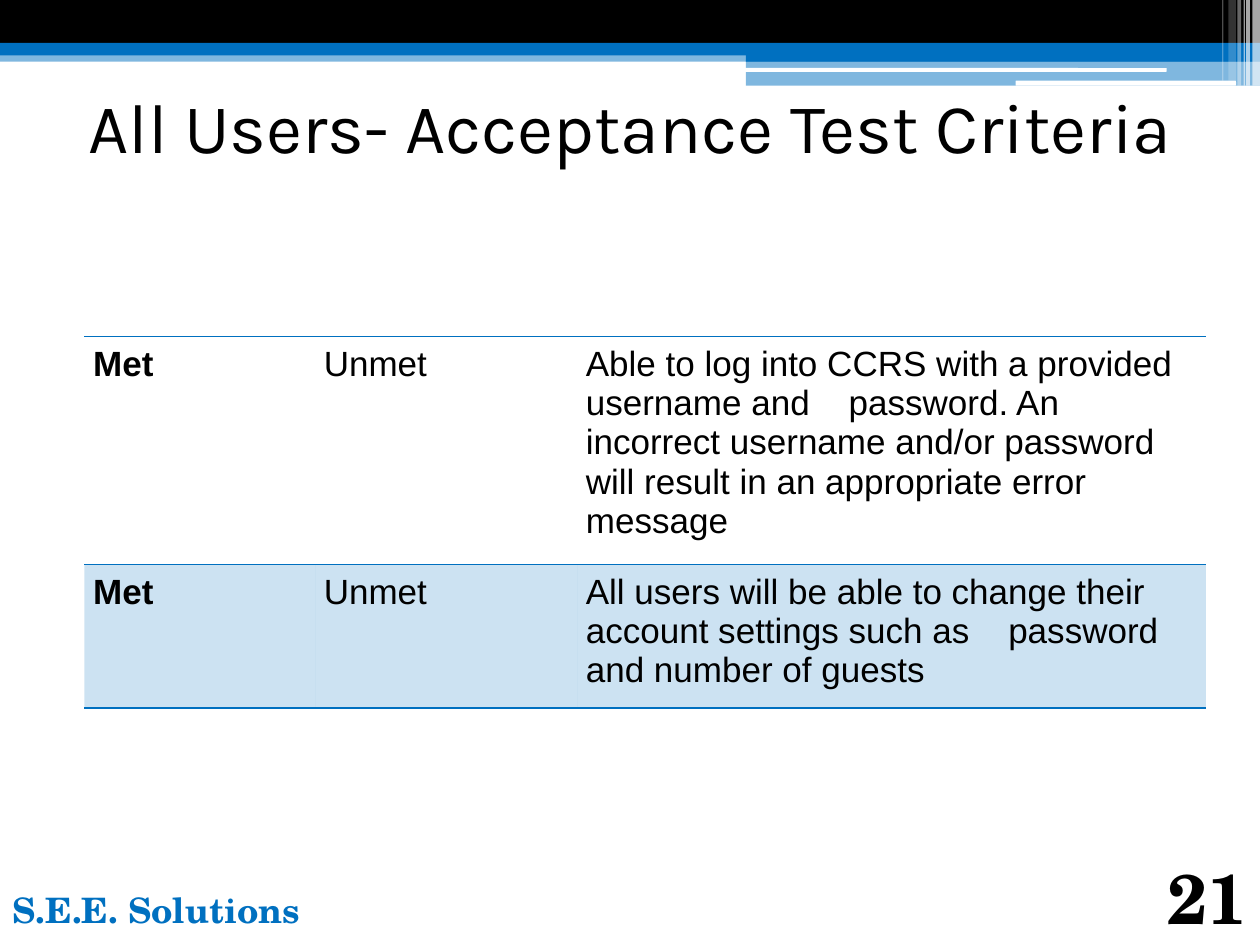
from lxml import etree
from pptx import Presentation
from pptx.dml.color import RGBColor
from pptx.enum.shapes import MSO_SHAPE
from pptx.enum.text import MSO_ANCHOR, PP_ALIGN
from pptx.oxml.ns import qn
from pptx.util import Inches, Pt

RECTANGLE, ROUNDED = MSO_SHAPE.RECTANGLE, MSO_SHAPE.ROUNDED_RECTANGLE
TOP, MIDDLE, BOTTOM = MSO_ANCHOR.TOP, MSO_ANCHOR.MIDDLE, MSO_ANCHOR.BOTTOM
LEFT, CENTER, RIGHT = PP_ALIGN.LEFT, PP_ALIGN.CENTER, PP_ALIGN.RIGHT
BLUE, BLACK, WHITE = "0070C0", "000000", "FFFFFF"


def paint(fill, color, opacity=100):
    """Solid fill from a hex string, with opacity in percent."""
    fill.solid()
    fill.fore_color.rgb = RGBColor.from_string(color)
    if opacity < 100:
        color_element = fill._xPr.find(qn("a:solidFill"))[0]
        etree.SubElement(color_element, qn("a:alpha"), val=str(opacity * 1000))


def add_run(paragraph, text, size, font, color, bold=False):
    run = paragraph.add_run()
    run.text = text
    run.font.size = Pt(size)
    run.font.name = font
    run.font.bold = bold
    paint(run.font.fill, color)


presentation = Presentation()
presentation.slide_width, presentation.slide_height = Inches(10), Inches(7.5)
slide = presentation.slides.add_slide(presentation.slide_layouts[6])
paint(slide.background.fill, WHITE)

# Header bands, then the white stripes at the right edge
bands = [
    (RECTANGLE, 0, 0.4, 10, 0.09, BLUE, 50),
    (RECTANGLE, 0, 0, 10, 0.34, BLACK, 100),
    (RECTANGLE, 0, 0.34, 10, 0.1, BLUE, 100),
    (RECTANGLE, 5.92, 0.39, 4.08, 0.1, BLUE, 100),
    (RECTANGLE, 5.92, 0.48, 4.08, 0.2, BLUE, 50),
    (ROUNDED, 5.91, 0.54, 3.35, 0.03, WHITE, 100),
    (ROUNDED, 8.06, 0.64, 1.75, 0.04, WHITE, 100),
]
stripes = [
    (9.94, 0.06, 0.68, 65),
    (9.89, 0.03, 0.68, 65),
    (9.87, 0.01, 0.68, 60),
    (9.82, 0.03, 0.68, 40),
    (9.75, 0.06, 0.64, 20),
    (9.7, 0.01, 0.64, 30),
]
bands += [(RECTANGLE, left, 0, width, height, WHITE, opacity)
          for left, width, height, opacity in stripes]
for kind, left, top, width, height, color, opacity in bands:
    shape = slide.shapes.add_shape(
        kind, Inches(left), Inches(top), Inches(width), Inches(height))
    shape.shadow.inherit = False
    shape.line.fill.background()
    paint(shape.fill, color, opacity)

# Title, team name and slide number
texts = [
    ("All Users- Acceptance Test Criteria", 0.5, 0.5, 9, 1,
     MIDDLE, CENTER, 40, "Karla", BLACK, False),
    ("S.E.E. Solutions", 0, 7, 2.5, 0.5,
     TOP, LEFT, 20, "TeX Gyre Schola", BLUE, True),
    ("21", 9, 6.9, 1, 0.6,
     BOTTOM, RIGHT, 40, "TeX Gyre Schola", BLACK, True),
]
for text, left, top, width, height, anchor, align, size, font, color, bold in texts:
    box = slide.shapes.add_textbox(
        Inches(left), Inches(top), Inches(width), Inches(height))
    box.text_frame.word_wrap = True
    box.text_frame.vertical_anchor = anchor
    paragraph = box.text_frame.paragraphs[0]
    paragraph.alignment = align
    add_run(paragraph, text, size, font, color, bold)

# Criteria table
criteria = [
    "Able to log into CCRS with a provided username and    password. An incorrect "
    "username and/or password will result in an appropriate error message",
    "All users will be able to change their account settings such as    password "
    "and number of guests",
]
column_widths = [1.83, 2.08, 4.99]
row_heights = [1.69, 1.08]
table = slide.shapes.add_table(
    len(row_heights), len(column_widths), Inches(0.67), Inches(2.67),
    Inches(sum(column_widths)), Inches(sum(row_heights))).table
table.first_row = False
table.horz_banding = False
for column, width in zip(table.columns, column_widths):
    column.width = Inches(width)
for row, height in zip(table.rows, row_heights):
    row.height = Inches(height)

# Border widths in points: (top, bottom) of each row
row_borders = [(1, 0.5), (0.5, 1)]
for row_index, criterion in enumerate(criteria):
    top_width, bottom_width = row_borders[row_index]
    for column_index, text in enumerate(["Met", "Unmet", criterion]):
        cell = table.cell(row_index, column_index)
        cell.margin_left = cell.margin_right = Inches(0.07)
        cell.margin_top = cell.margin_bottom = Inches(0.07)
        add_run(cell.text_frame.paragraphs[0], text, 20, "Arial", BLACK,
                bold=column_index == 0)
        properties = cell._tc.get_or_add_tcPr()
        for side, width in (("L", 0), ("R", 0), ("T", top_width), ("B", bottom_width)):
            line = etree.SubElement(properties, qn(f"a:ln{side}"), w=str(Pt(width)))
            if width:
                solid = etree.SubElement(line, qn("a:solidFill"))
                etree.SubElement(solid, qn("a:srgbClr"), val=BLUE)
            else:
                etree.SubElement(line, qn("a:noFill"))
        if row_index == 1:
            paint(cell.fill, BLUE, 20)
        else:
            cell.fill.background()

presentation.save("out.pptx")
